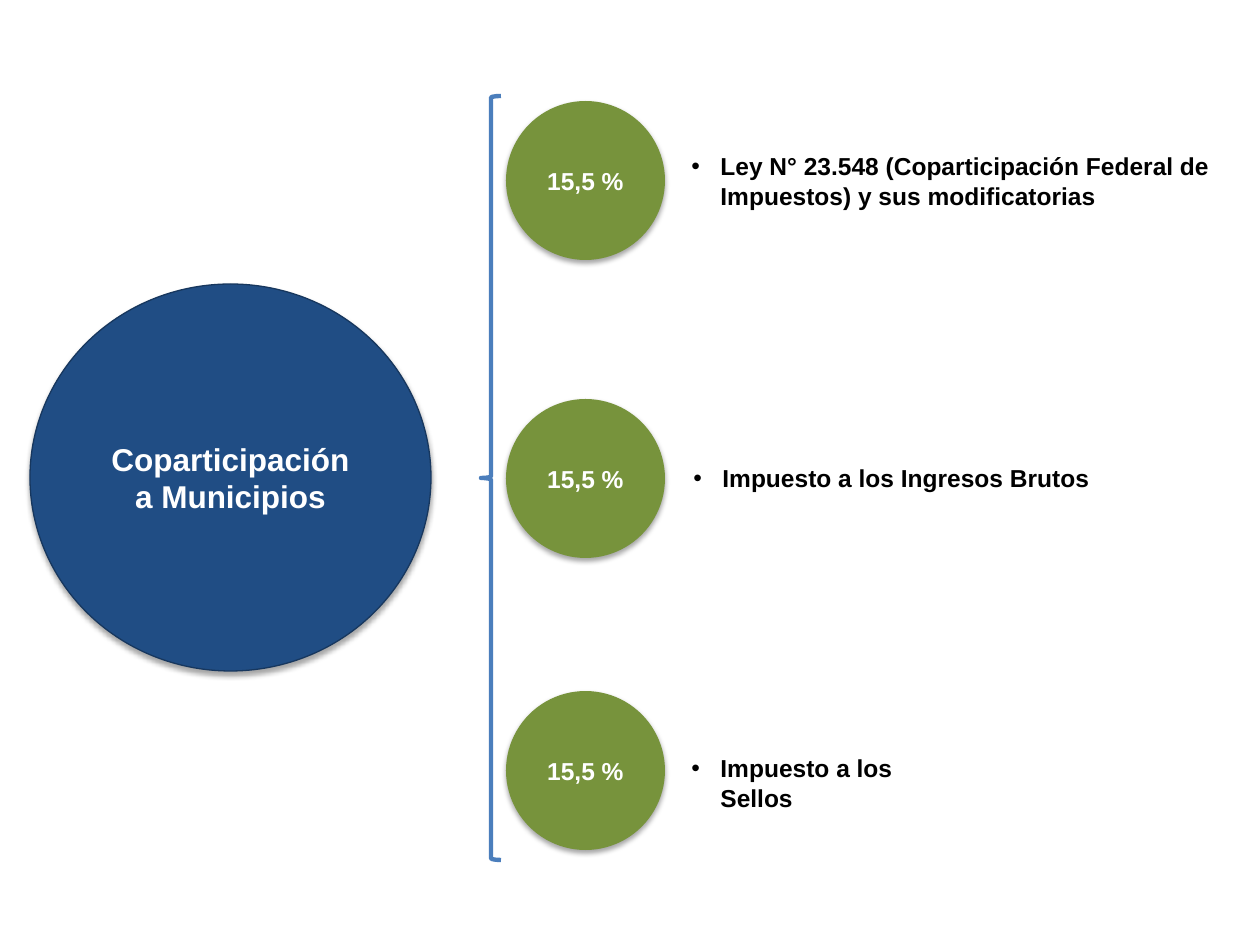
import dataclasses

import lxml.etree
import pptx
import pptx.dml.color
import pptx.enum.shapes
import pptx.enum.text
import pptx.oxml
import pptx.oxml.ns
import pptx.util

EMU_PER_PX = 914400 / 126
SHAPES = pptx.enum.shapes.MSO_SHAPE


@dataclasses.dataclass(frozen=True)
class Theme:
    font: str = "Arial"
    blue: str = "204D84"
    navy: str = "17375E"
    green: str = "77933C"
    brace: str = "4B7EBC"
    white: str = "FFFFFF"
    black: str = "000000"
    title_size: int = 18
    body_size: int = 14


THEME = Theme()


def px(length):
    return pptx.util.Emu(round(length * EMU_PER_PX))


def color(name):
    return pptx.dml.color.RGBColor.from_string(name)


def add_span(para, text, size, ink):
    span = para.add_run()
    span.text = text
    span.font.name = THEME.font
    span.font.size = pptx.util.Pt(size)
    span.font.bold = True
    span.font.color.rgb = color(ink)


def add_shadow(shape):
    """Give the shape a soft shadow falling straight down."""
    shape.shadow.inherit = False
    effects = shape._element.spPr.find(pptx.oxml.ns.qn("a:effectLst"))
    effects.append(pptx.oxml.parse_xml(
        f'<a:outerShdw {pptx.oxml.ns.nsdecls("a")} blurRad="39370" dist="22860"'
        ' dir="5400000" rotWithShape="0"><a:srgbClr val="000000">'
        '<a:alpha val="35000"/></a:srgbClr></a:outerShdw>'))


def add_circle(page, box, text, size, fill, outline=None):
    circle = page.shapes.add_shape(SHAPES.OVAL, *map(px, box))
    circle.fill.solid()
    circle.fill.fore_color.rgb = color(fill)
    if outline:
        circle.line.color.rgb = color(outline)
        circle.line.width = pptx.util.Pt(0.75)
    else:
        circle.line.fill.background()
    add_shadow(circle)
    frame = circle.text_frame
    frame.word_wrap = True
    frame.vertical_anchor = pptx.enum.text.MSO_ANCHOR.MIDDLE
    para = frame.paragraphs[0]
    para.alignment = pptx.enum.text.PP_ALIGN.CENTER
    add_span(para, text, size, THEME.white)


def add_brace(page, box):
    brace = page.shapes.add_shape(SHAPES.LEFT_BRACE, *map(px, box))
    brace.shadow.inherit = False
    brace.fill.background()
    brace.line.color.rgb = color(THEME.brace)
    brace.line.width = pptx.util.Pt(2.5)


def add_bullet_text(page, box, text):
    frame = page.shapes.add_textbox(*map(px, box)).text_frame
    frame.word_wrap = True
    frame.auto_size = pptx.enum.text.MSO_AUTO_SIZE.SHAPE_TO_FIT_TEXT
    para = frame.paragraphs[0]
    properties = para._p.get_or_add_pPr()
    indent = px(29)
    properties.set("marL", str(indent))
    properties.set("indent", str(-indent))
    for tag, key, value in (("a:buFont", "typeface", THEME.font),
                            ("a:buChar", "char", "•")):
        lxml.etree.SubElement(properties, pptx.oxml.ns.qn(tag)).set(key, value)
    add_span(para, text, THEME.body_size, THEME.black)


def add_share(page, box, share, source, text_box):
    """Place a share circle and its source; text_box is relative to box."""
    left, top, diameter = box
    add_circle(page, (left, top, diameter, diameter), share,
               THEME.body_size, THEME.green)
    dx, dy, width, height = text_box
    add_bullet_text(page, (left + dx, top + dy, width, height), source)


def main():
    deck = pptx.Presentation()
    deck.slide_width, deck.slide_height = px(1260), px(945)
    page = deck.slides.add_slide(deck.slide_layouts[6])

    add_circle(page, (30, 284, 401, 387), "Coparticipación a Municipios",
               THEME.title_size, THEME.blue, THEME.navy)
    add_brace(page, (481, 96, 20, 764))
    shares = (
        (101, "Ley N° 23.548 (Coparticipación Federal de Impuestos) y sus "
              "modificatorias", (173, 44, 546, 72)),
        (399, "Impuesto a los Ingresos Brutos", (175, 58, 514, 43)),
        (691, "Impuesto a los Sellos", (173, 56, 286, 43)),
    )
    for top, source, text_box in shares:
        add_share(page, (506, top, 159), "15,5 %", source, text_box)

    deck.save("out.pptx")


if __name__ == "__main__":
    main()
